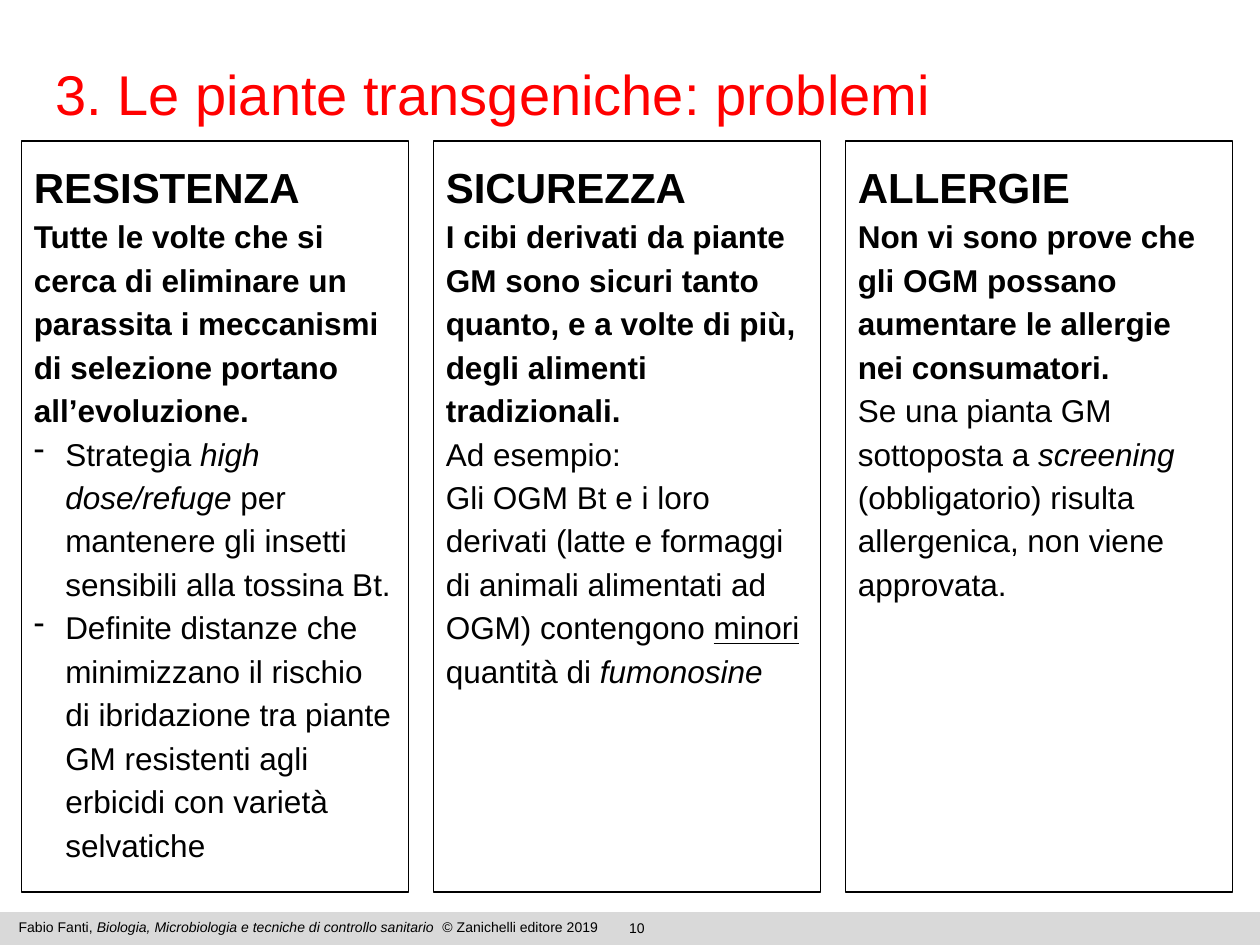
"""Build a slide with three columns on the problems of transgenic plants."""
from lxml import etree
from pptx import Presentation
from pptx.dml.color import RGBColor
from pptx.enum.shapes import MSO_SHAPE
from pptx.enum.text import MSO_ANCHOR, MSO_AUTO_SIZE, PP_ALIGN
from pptx.oxml.ns import qn
from pptx.util import Inches, Pt

RECTANGLE = MSO_SHAPE.RECTANGLE
TOP = MSO_ANCHOR.TOP
NO_FIT = MSO_AUTO_SIZE.NONE
LEFT, CENTER = PP_ALIGN.LEFT, PP_ALIGN.CENTER

FONT = "Arial"
COLORS = {"text": "000000", "title": "FF0000", "paper": "FFFFFF", "footer": "D9D9D9"}

TITLE = "3. Le piante transgeniche: problemi"
COLUMNS = [
    {
        "heading": "RESISTENZA",
        "claim": "Tutte le volte che si cerca di eliminare un parassita i meccanismi "
                 "di selezione portano all’evoluzione.",
        "bulleted": True,
        "details": [
            [("Strategia ", ""), ("high dose/refuge ", "italic"),
             ("per mantenere gli insetti sensibili alla tossina Bt.", "")],
            [("Definite distanze che minimizzano il rischio di ibridazione tra piante "
              "GM resistenti agli erbicidi con varietà selvatiche", "")],
        ],
    },
    {
        "heading": "SICUREZZA",
        "claim": "I cibi derivati da piante GM sono sicuri tanto quanto, e a volte di "
                 "più, degli alimenti tradizionali.",
        "bulleted": False,
        "details": [
            [("Ad esempio:", "")],
            [("Gli OGM Bt e i loro derivati (latte e formaggi di animali alimentati "
              "ad OGM) contengono ", ""), ("minori", "underline"),
             (" quantità di ", ""), ("fumonosine", "italic")],
        ],
    },
    {
        "heading": "ALLERGIE",
        "claim": "Non vi sono prove che gli OGM possano aumentare le allergie nei "
                 "consumatori.",
        "bulleted": False,
        "details": [
            [("Se una pianta GM sottoposta a ", ""), ("screening", "italic"),
             (" (obbligatorio) risulta allergenica, non viene approvata.", "")],
        ],
    },
]
CREDIT = [("Fabio Fanti, ", ""),
          ("Biologia, Microbiologia e tecniche di controllo sanitario", "italic"),
          ("  © Zanichelli editore 2019", "")]
PAGE_NUMBER = [("10", "")]

SLIDE_WIDTH, SLIDE_HEIGHT = 10, 7.5
COLUMN_LEFT, COLUMN_TOP = 0.17, 1.12
COLUMN_WIDTH, COLUMN_HEIGHT, COLUMN_PITCH = 3.07, 5.96, 3.27
FOOTER_TOP = 7.24
BULLET_INDENT = 0.25


def color(name):
    return RGBColor.from_string(COLORS[name])


def prepare_frame(shape, side=0.1, top=0.05):
    frame = shape.text_frame
    frame.word_wrap = True
    frame.auto_size = NO_FIT
    frame.vertical_anchor = TOP
    frame.margin_left = frame.margin_right = Inches(side)
    frame.margin_top = frame.margin_bottom = Inches(top)
    return frame


def write(para, spans, size, ink="text", align=LEFT):
    para.alignment = align
    for text, style in spans:
        span = para.add_run()
        span.text = text
        span.font.name = FONT
        span.font.size = Pt(size)
        span.font.color.rgb = color(ink)
        if style:
            setattr(span.font, style, True)


def add_dash(para):
    props = para._p.get_or_add_pPr()
    props.set("marL", str(Inches(BULLET_INDENT)))
    props.set("indent", str(-Inches(BULLET_INDENT)))
    bullet_color = etree.SubElement(props, qn("a:buClr"))
    etree.SubElement(bullet_color, qn("a:srgbClr"), val=COLORS["text"])
    etree.SubElement(props, qn("a:buChar"), char="-")


def add_rectangle(page, *place):
    box = page.shapes.add_shape(RECTANGLE, *map(Inches, place))
    box.shadow.inherit = False
    return box


def add_footer_text(page, place, spans, align):
    box = page.shapes.add_textbox(*map(Inches, place))
    write(prepare_frame(box).paragraphs[0], spans, 8, align=align)


def add_footer(page):
    band = add_rectangle(page, 0, FOOTER_TOP, SLIDE_WIDTH, SLIDE_HEIGHT - FOOTER_TOP)
    band.fill.solid()
    band.fill.fore_color.rgb = color("footer")
    band.line.fill.background()
    add_footer_text(page, (3.94, 7.25, 2.23, 0.17), PAGE_NUMBER, CENTER)
    add_footer_text(page, (0.05, FOOTER_TOP, 5.04, 0.24), CREDIT, LEFT)


def add_title(page):
    title = page.shapes.title
    title.left, title.top, title.width, title.height = map(Inches, (0.35, 0.42, 9.65, 0.97))
    title.fill.solid()
    title.fill.fore_color.rgb = color("paper")
    title.line.color.rgb = color("paper")
    title.line.width = Pt(0.75)
    write(prepare_frame(title, side=0.09).paragraphs[0], [(TITLE, "")], 32, "title")


def add_column(page, index, column):
    box = add_rectangle(page, COLUMN_LEFT + index * COLUMN_PITCH, COLUMN_TOP,
                        COLUMN_WIDTH, COLUMN_HEIGHT)
    box.fill.background()
    box.line.color.rgb = color("text")
    box.line.width = Pt(0.75)
    frame = prepare_frame(box, top=0.1)
    heading = frame.paragraphs[0]
    write(heading, [(column["heading"], "bold")], 24)
    write(frame.add_paragraph(), [(column["claim"], "bold")], 18)
    for spans in column["details"]:
        para = frame.add_paragraph()
        if column["bulleted"]:
            add_dash(para)
        write(para, spans, 18)
    for para in frame.paragraphs:
        para.line_spacing = 1.15


def main():
    deck = Presentation()
    deck.slide_width, deck.slide_height = Inches(SLIDE_WIDTH), Inches(SLIDE_HEIGHT)
    page = deck.slides.add_slide(deck.slide_layouts[5])
    add_footer(page)
    add_title(page)
    for index, column in enumerate(COLUMNS):
        add_column(page, index, column)
    deck.save("out.pptx")


if __name__ == "__main__":
    main()
